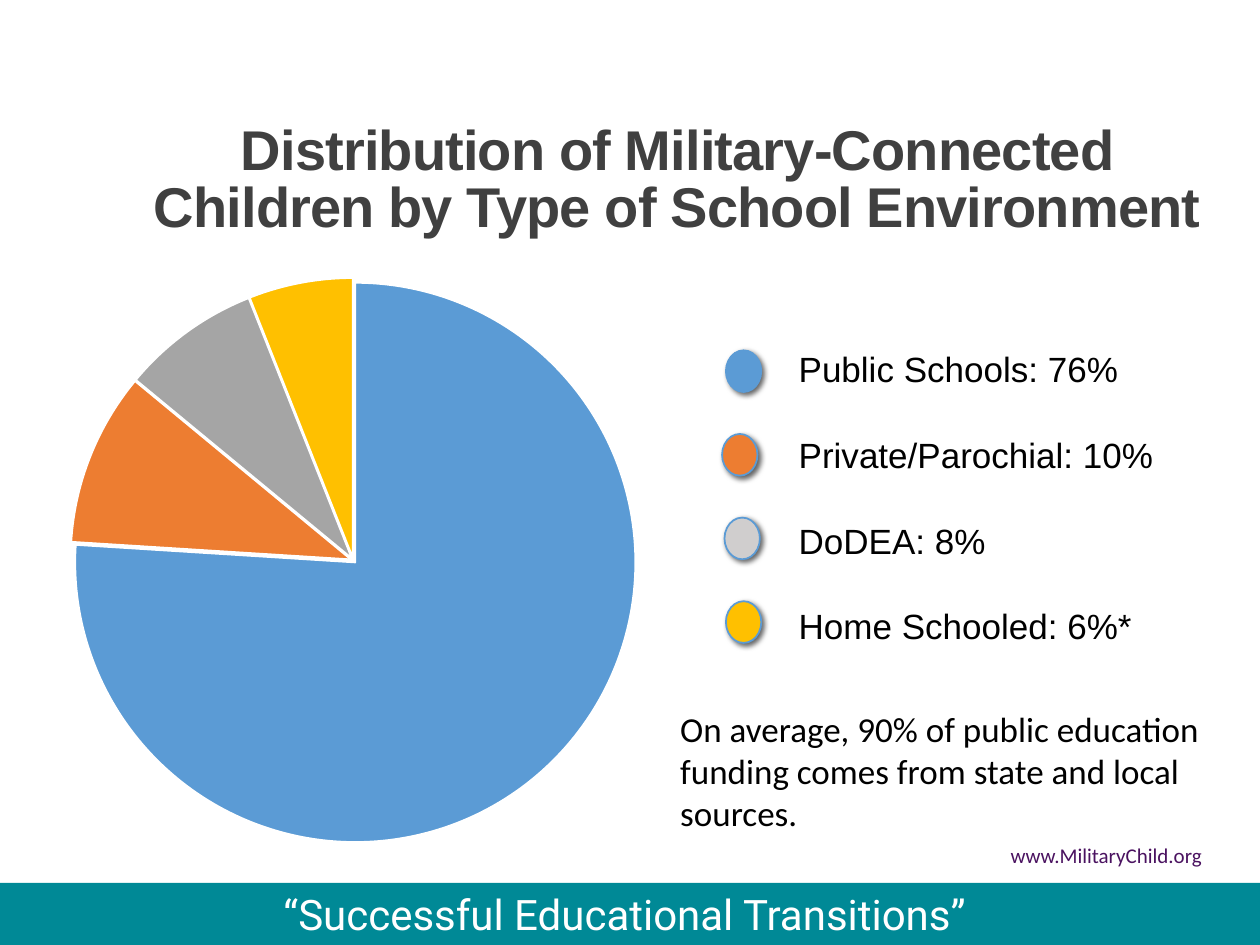
from dataclasses import dataclass

from lxml import etree
from pptx import Presentation
from pptx.chart.data import CategoryChartData
from pptx.dml.color import RGBColor
from pptx.enum import chart as charts, shapes, text
from pptx.oxml import parse_xml
from pptx.oxml.ns import nsdecls, qn
from pptx.util import Pt


@dataclass(frozen=True)
class Theme:
    teal: str = "008996"
    white: str = "FFFFFF"
    black: str = "000000"
    heading: str = "404040"
    purple: str = "4A1260"
    blue: str = "5B9BD5"
    orange: str = "ED7D31"
    gray: str = "A5A5A5"
    light_gray: str = "D0CECE"
    gold: str = "FFC000"
    title_size: float = 32
    banner_size: float = 24
    body_size: float = 20
    link_size: float = 12
    chart_size: float = 10


@dataclass(frozen=True)
class Box:
    left: float
    top: float
    width: float
    height: float

    def lengths(self) -> list:
        return [Pt(v) for v in (self.left, self.top, self.width, self.height)]


@dataclass(frozen=True)
class Style:
    font: str
    size: float
    color: str
    align: text.PP_ALIGN = text.PP_ALIGN.LEFT
    bold: bool = False


@dataclass(frozen=True)
class School:
    label: str
    percent: int
    slice_color: str
    marker_color: str
    marker_left: float
    suffix: str = ""


THEME = Theme()
SCHOOLS = [
    School("Public Schools", 76, THEME.blue, THEME.blue, 414.8),
    School("Private/Parochial", 10, THEME.orange, THEME.orange, 412.6),
    School("DoDEA", 8, THEME.gray, THEME.light_gray, 414),
    School("Home Schooled", 6, THEME.gold, THEME.gold, 414.8, "*"),
]
MARKER_TOP, MARKER_PITCH = 200.2, 47.8
MARKER_WIDTH, MARKER_HEIGHT = 20.2, 23.8


def rgb(color: str) -> RGBColor:
    return RGBColor.from_string(color)


def format_paragraph(paragraph, style: Style) -> None:
    paragraph.alignment = style.align
    for run in paragraph.runs:
        run.font.name = style.font
        run.font.size = Pt(style.size)
        run.font.bold = style.bold
        run.font.color.rgb = rgb(style.color)


def add_text(slide, box: Box, lines: list[str], style: Style, gap: float = 0) -> None:
    frame = slide.shapes.add_textbox(*box.lengths()).text_frame
    frame.word_wrap = True
    frame.text = "\n".join(lines)
    for index, paragraph in enumerate(frame.paragraphs):
        format_paragraph(paragraph, style)
        if index:
            paragraph.space_before = Pt(gap)


def add_title(slide, box: Box, words: str, style: Style) -> None:
    title = slide.shapes.title
    title.left, title.top, title.width, title.height = box.lengths()
    frame = title.text_frame
    frame.text = words
    frame.word_wrap = True
    frame.auto_size = text.MSO_AUTO_SIZE.NONE
    frame.vertical_anchor = text.MSO_ANCHOR.TOP
    frame.margin_top = Pt(0)
    paragraph = frame.paragraphs[0]
    paragraph.line_spacing = 0.85
    format_paragraph(paragraph, style)
    paragraph.runs[0].font._element.set("spc", "-50")


def add_banner(slide, box: Box) -> None:
    banner = slide.shapes.add_shape(shapes.MSO_SHAPE.RECTANGLE, *box.lengths())
    banner.shadow.inherit = False
    banner.fill.solid()
    banner.fill.fore_color.rgb = rgb(THEME.teal)
    banner.line.fill.background()


def add_pie(slide, box: Box) -> None:
    data = CategoryChartData()
    data.categories = [str(i) for i in range(1, len(SCHOOLS) + 1)]
    data.add_series("Series 1", [school.percent for school in SCHOOLS])
    frame = slide.shapes.add_chart(charts.XL_CHART_TYPE.PIE, *box.lengths(), data)
    chart = frame.chart
    chart.has_legend = False
    chart.has_title = False
    chart.font.name = "Calibri"
    chart.font.size = Pt(THEME.chart_size)
    chart.font.color.rgb = rgb(THEME.black)
    plot = chart.plots[0]
    plot.vary_by_categories = True
    series = plot.series[0]
    for index, school in enumerate(SCHOOLS):
        point = series.points[index].format
        point.fill.solid()
        point.fill.fore_color.rgb = rgb(school.slice_color)
        point.line.color.rgb = rgb(THEME.white)
        point.line.width = Pt(1)
    explosion = etree.Element(qn("c:explosion"), val="1")
    series._element.find(qn("c:dPt")).addprevious(explosion)
    plot_area = chart._chartSpace.chart.plotArea
    for old in plot_area.findall(qn("c:layout")):
        plot_area.remove(old)
    parts = {"layoutTarget": "inner", "xMode": "edge", "yMode": "edge",
             "x": 0.229, "y": 0, "w": 0.626, "h": 1}
    children = "".join(f'<c:{tag} val="{value}"/>' for tag, value in parts.items())
    plot_area.insert(0, parse_xml(
        f'<c:layout {nsdecls("c")}><c:manualLayout>{children}</c:manualLayout></c:layout>'))


def add_marker(slide, box: Box, color: str) -> None:
    marker = slide.shapes.add_shape(shapes.MSO_SHAPE.OVAL, *box.lengths())
    marker.fill.solid()
    marker.fill.fore_color.rgb = rgb(color)
    marker.line.color.rgb = rgb(THEME.blue)
    marker.line.width = Pt(1)
    marker._element.spPr.append(parse_xml(
        f'<a:effectLst {nsdecls("a")}><a:outerShdw blurRad="{Pt(3)}" dist="{Pt(2)}" '
        f'dir="2700000" rotWithShape="0"><a:srgbClr val="{THEME.black}">'
        '<a:alpha val="60000"/></a:srgbClr></a:outerShdw></a:effectLst>'))


def main() -> None:
    presentation = Presentation()
    presentation.slide_width, presentation.slide_height = Pt(720), Pt(540)
    slide = presentation.slides.add_slide(presentation.slide_layouts[5])
    center = text.PP_ALIGN.CENTER

    add_banner(slide, Box(0, 504.5, 722, 36))
    add_text(slide, Box(126, 504, 462, 36), ["“Successful Educational Transitions”"],
             Style("Roboto", THEME.banner_size, THEME.white, center))
    add_title(slide, Box(78.5, 71.3, 617, 95.8),
              "Distribution of Military-Connected Children by Type of School Environment",
              Style("Arial", THEME.title_size, THEME.heading, center, True))
    add_text(slide, Box(466, 478, 228, 21.6), ["www.MilitaryChild.org"],
             Style("Calibri", THEME.link_size, THEME.purple, text.PP_ALIGN.RIGHT))
    add_text(slide, Box(381.6, 401, 329.8, 80),
             ["On average, 90% of public education funding comes from state and local sources."],
             Style("Calibri", THEME.body_size, THEME.black))
    add_pie(slide, Box(-90.7, 158.4, 540, 323.3))
    add_text(slide, Box(449.3, 195.1, 246.2, 177.1),
             [f"{school.label}: {school.percent}%{school.suffix}" for school in SCHOOLS],
             Style("Arial", THEME.body_size, THEME.black), gap=25)
    for index, school in enumerate(SCHOOLS):
        top = MARKER_TOP + index * MARKER_PITCH
        add_marker(slide, Box(school.marker_left, top, MARKER_WIDTH, MARKER_HEIGHT),
                   school.marker_color)

    presentation.save("out.pptx")


if __name__ == "__main__":
    main()
